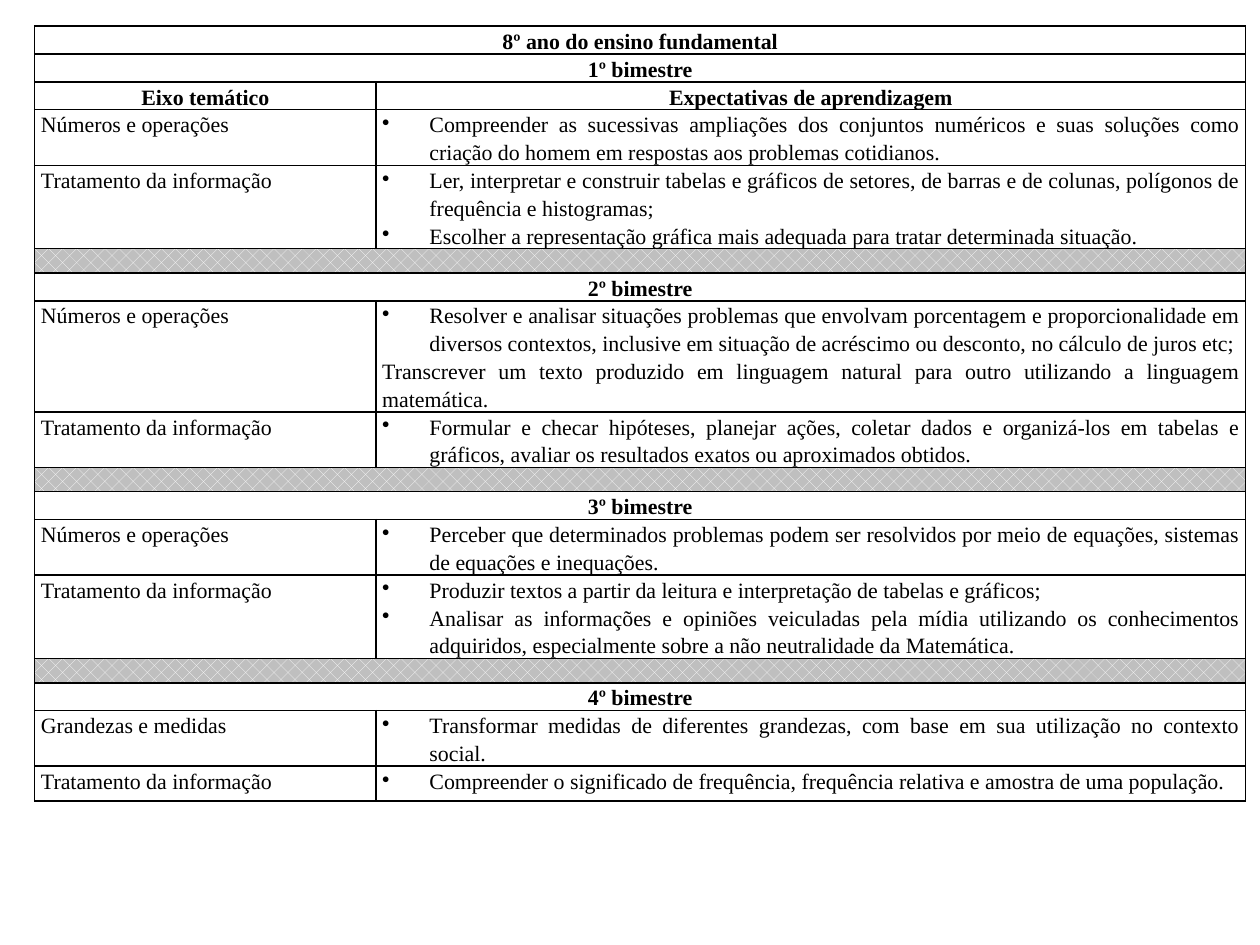
from lxml.etree import SubElement
from pptx import Presentation
from pptx.dml.color import RGBColor
from pptx.enum.dml import MSO_PATTERN
from pptx.enum.text import PP_ALIGN
from pptx.oxml import parse_xml
from pptx.oxml.ns import nsdecls, qn
from pptx.util import Pt

COLORS = {"ink": "000000", "hatch": "FFFFFF", "divider": "BFBFBF"}
NUMBERS = "Números e operações"
DATA = "Tratamento da informação"
BULLET = "• "

TERMS = [
    ("1º bimestre", [
        (NUMBERS, 2, [BULLET + "Compreender as sucessivas ampliações dos conjuntos numéricos e suas soluções "
                      "como criação do homem em respostas aos problemas cotidianos."]),
        (DATA, 3, [BULLET + "Ler, interpretar e construir tabelas e gráficos de setores, de barras e de colunas, "
                   "polígonos de frequência e histogramas;",
                   BULLET + "Escolher a representação gráfica mais adequada para tratar determinada situação."]),
    ]),
    ("2º bimestre", [
        (NUMBERS, 4, [BULLET + "Resolver e analisar situações problemas que envolvam porcentagem e "
                      "proporcionalidade em diversos contextos, inclusive em situação de acréscimo ou desconto, "
                      "no cálculo de juros etc;",
                      "Transcrever um texto produzido em linguagem natural para outro utilizando a linguagem "
                      "matemática."]),
        (DATA, 2, [BULLET + "Formular e checar hipóteses, planejar ações, coletar dados e organizá-los em tabelas "
                   "e gráficos, avaliar os resultados exatos ou aproximados obtidos."]),
    ]),
    ("3º bimestre", [
        (NUMBERS, 2, [BULLET + "Perceber que determinados problemas podem ser resolvidos por meio de equações, "
                      "sistemas de equações e inequações."]),
        (DATA, 3, [BULLET + "Produzir textos a partir da leitura e interpretação de tabelas e gráficos;",
                   BULLET + "Analisar as informações e opiniões veiculadas pela mídia utilizando os conhecimentos "
                   "adquiridos, especialmente sobre a não neutralidade da Matemática."]),
    ]),
    ("4º bimestre", [
        ("Grandezas e medidas", 2, [BULLET + "Transformar medidas de diferentes grandezas, com base em sua "
                                    "utilização no contexto social."]),
        (DATA, 1, [BULLET + "Compreender o significado de frequência, frequência relativa e amostra de uma "
                   "população."]),
    ]),
]


def curriculum_rows():
    """Return (kind, line count, cell contents) for every table row."""
    rows = [("heading", 1, [["8º ano do ensino fundamental"]])]
    for index, (term, topics) in enumerate(TERMS):
        if index:
            rows.append(("divider", 1, []))
        rows.append(("heading", 1, [[term]]))
        if index == 0:
            rows.append(("heading", 1, [["Eixo temático"], ["Expectativas de aprendizagem"]]))
        rows += [("topic", lines, [[axis], goals]) for axis, lines, goals in topics]
    return rows


class CurriculumSlide:
    """Holds the text style and the slide being filled."""

    font, size, spacing = "Times New Roman", Pt(12.5), 1.15
    line_height, divider_height, last_height = 15.85, 13.75, 20
    margin, indent, border = Pt(3.6), Pt(27), Pt(1)

    def __init__(self, slide):
        """Keep the slide that receives the table."""
        self.slide = slide

    def table(self, left, top, widths, rows):
        """Add the table and fill each row by its kind."""
        heights = [self.divider_height if kind == "divider" else lines * self.line_height
                   for kind, lines, _ in rows]
        heights[-1] = self.last_height
        table = self.slide.shapes.add_table(len(rows), len(widths), Pt(left), Pt(top),
                                            Pt(sum(widths)), Pt(sum(heights))).table
        table.first_row = table.horz_banding = False
        for column, width in zip(table.columns, widths):
            column.width = Pt(width)
        for index, (kind, _, contents) in enumerate(rows):
            table.rows[index].height = Pt(heights[index])
            for column in range(len(widths)):
                self.frame_cell(table.cell(index, column), kind)
            if len(contents) < len(widths):
                table.cell(index, 0).merge(table.cell(index, len(widths) - 1))
            for column, paragraphs in enumerate(contents):
                self.text(table.cell(index, column), paragraphs, kind == "heading")

    def frame_cell(self, cell, kind):
        """Set the margins, fill, borders and empty-text size of a cell."""
        cell.margin_left = cell.margin_right = self.margin
        cell.margin_top = cell.margin_bottom = 0
        if kind == "divider":
            cell.fill.patterned()
            cell.fill.pattern = MSO_PATTERN.PERCENT_25
            cell.fill.fore_color.rgb = RGBColor.from_string(COLORS["hatch"])
            cell.fill.back_color.rgb = RGBColor.from_string(COLORS["divider"])
        else:
            cell.fill.background()
        properties = cell._tc.get_or_add_tcPr()
        for position, side in enumerate("LRTB"):
            properties.insert(position, parse_xml(
                f'<a:ln{side} {nsdecls("a")} w="{self.border}"><a:solidFill>'
                f'<a:srgbClr val="{COLORS["ink"]}"/></a:solidFill></a:ln{side}>'))
        end = SubElement(cell.text_frame.paragraphs[0]._p, qn("a:endParaRPr"))
        end.set("sz", str(int(self.size.pt * 100)))
        SubElement(end, qn("a:latin")).set("typeface", self.font)

    def text(self, cell, paragraphs, heading):
        """Write the paragraphs of a cell, with hanging bullets where marked."""
        frame = cell.text_frame
        for index, content in enumerate(paragraphs):
            paragraph = frame.add_paragraph() if index else frame.paragraphs[0]
            paragraph.alignment = PP_ALIGN.CENTER if heading else PP_ALIGN.JUSTIFY
            paragraph.line_spacing = self.spacing
            if content.startswith(BULLET):
                self.bullet(paragraph)
            run = paragraph.add_run()
            run.text = content.removeprefix(BULLET)
            run.font.name, run.font.size, run.font.bold = self.font, self.size, heading
            run.font.color.rgb = RGBColor.from_string(COLORS["ink"])

    def bullet(self, paragraph):
        """Give the paragraph a bullet and a hanging indent."""
        properties = paragraph._p.get_or_add_pPr()
        properties.set("marL", str(self.indent))
        properties.set("indent", str(-self.indent))
        SubElement(properties, qn("a:buChar")).set("char", BULLET.strip())


def main():
    """Build and save the curriculum slide."""
    deck = Presentation()
    deck.slide_width, deck.slide_height = Pt(720), Pt(540)
    page = CurriculumSlide(deck.slides.add_slide(deck.slide_layouts[6]))
    page.table(19.8, 15, [195, 497], curriculum_rows())
    deck.save("out.pptx")


if __name__ == "__main__":
    main()
